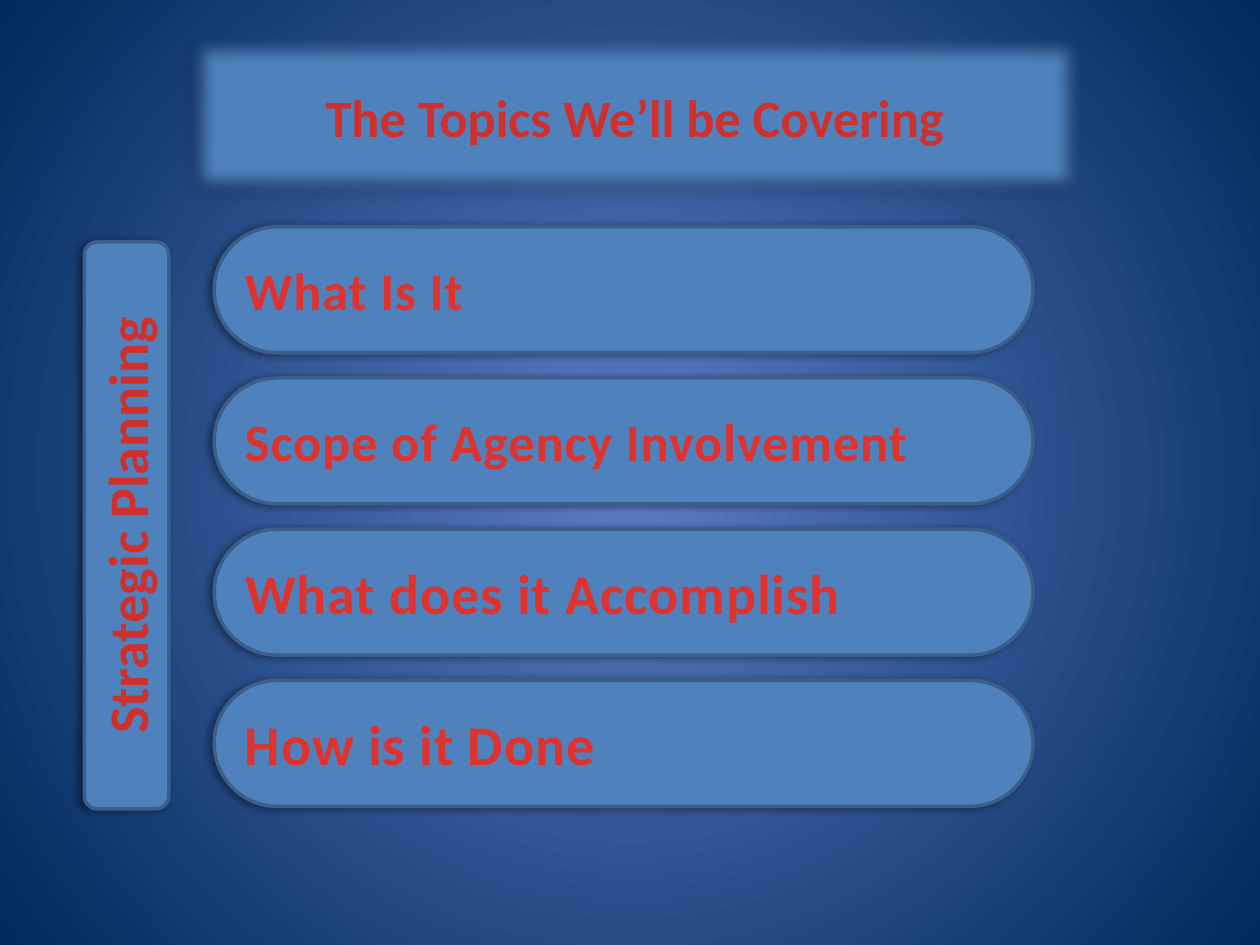
"""Build the agenda slide on strategic planning."""
from pptx import Presentation
from pptx import util as u
from pptx.dml.color import RGBColor
from pptx.enum import shapes, text
from pptx.oxml import parse_xml
from pptx.oxml.ns import nsdecls, qn

TITLE = "The Topics We’ll be Covering"
SIDEBAR = "Strategic Planning"
TOPICS = [
    ("What Is It", 30),
    ("Scope of Agency Involvement", 30),
    ("What does it Accomplish", 32),
    ("How is it Done", 32),
]
BODY_TOPIC = 2

COLORS = {
    "glow": "5E7CC5",
    "navy": "00295C",
    "panel": "4F81BD",
    "border": "3A5F8C",
    "heading": "D02F2C",
    "topic": "E0322D",
    "shadow": "000000",
}
TITLE_BOX = (108, 21.6, 509.76, 90)
SIDEBAR_BOX = (48.24, 138.24, 48.24, 324)
TOPIC_LEFT, TOPIC_TOP, TOPIC_WIDTH, TOPIC_HEIGHT, TOPIC_PITCH = 122.4, 129.6, 468, 72, 86.4


def rgb(name):
    return RGBColor.from_string(COLORS[name])


def paint_background(s):
    fill = s.background.fill
    fill.gradient()
    for stop, name, position in zip(fill.gradient_stops, ("glow", "navy"), (0, 1)):
        stop.color.rgb = rgb(name)
        stop.position = position
    lin = next(s.element.iter(qn("a:lin")))
    lin.getparent().replace(lin, parse_xml(
        f'<a:path {nsdecls("a")} path="circle">'
        '<a:fillToRect l="50000" t="50000" r="50000" b="50000"/></a:path>'))


def style_panel(sp, box, radius, shadow_angle, soft_edge=0):
    sp.left, sp.top, sp.width, sp.height = map(u.Pt, box)
    props = sp.element.spPr
    for old in props.findall(qn("a:prstGeom")):
        props.remove(old)
    props.insert(1, parse_xml(
        f'<a:prstGeom {nsdecls("a")} prst="roundRect"><a:avLst>'
        f'<a:gd name="adj" fmla="val {round(radius * 100000)}"/></a:avLst></a:prstGeom>'))
    sp.fill.solid()
    sp.fill.fore_color.rgb = rgb("panel")
    sp.line.color.rgb = rgb("border")
    sp.line.width = u.Pt(2)
    sp.shadow.inherit = False
    effects = props.find(qn("a:effectLst"))
    effects.append(parse_xml(
        f'<a:outerShdw {nsdecls("a")} blurRad="{u.Pt(4)}" dist="{u.Pt(3)}" '
        f'dir="{shadow_angle * 60000}" algn="ctr" rotWithShape="0">'
        f'<a:srgbClr val="{COLORS["shadow"]}"><a:alpha val="40000"/></a:srgbClr></a:outerShdw>'))
    if soft_edge:
        effects.append(parse_xml(f'<a:softEdge {nsdecls("a")} rad="{u.Pt(soft_edge)}"/>'))


def write(sp, words, size, color, align, spacing=0):
    tf = sp.text_frame
    tf.text = words
    tf.word_wrap = True
    tf.auto_size = text.MSO_AUTO_SIZE.NONE
    tf.vertical_anchor = text.MSO_ANCHOR.MIDDLE
    p = tf.paragraphs[0]
    p.alignment = align
    p.space_before = u.Pt(0)
    r = p.runs[0]
    r.font.name = "Calibri"
    r.font.size = u.Pt(size)
    r.font.bold = True
    r.font.color.rgb = rgb(color)
    if spacing:
        r.font._element.set("spc", str(round(spacing * 100)))


def add_panel(s):
    return s.shapes.add_shape(shapes.MSO_SHAPE.ROUNDED_RECTANGLE, 0, 0, 0, 0)


def main():
    prs = Presentation()
    prs.slide_width, prs.slide_height = u.Pt(720), u.Pt(540)
    s = prs.slides.add_slide(prs.slide_layouts[1])
    paint_background(s)
    title, body = s.placeholders

    style_panel(title, TITLE_BOX, 0.17, 135, soft_edge=8.86)
    write(title, TITLE, 30, "heading", text.PP_ALIGN.CENTER)

    for i, (words, size) in enumerate(TOPICS):
        sp = body if i == BODY_TOPIC else add_panel(s)
        box = (TOPIC_LEFT, TOPIC_TOP + i * TOPIC_PITCH, TOPIC_WIDTH, TOPIC_HEIGHT)
        style_panel(sp, box, 0.5, 180)
        write(sp, words, size, "topic", text.PP_ALIGN.LEFT, spacing=0.5)
    ppr = body.text_frame.paragraphs[0]._p.get_or_add_pPr()
    ppr.set("marL", "0")
    ppr.set("indent", "0")
    ppr.append(parse_xml(f'<a:buNone {nsdecls("a")}/>'))

    sidebar = add_panel(s)
    style_panel(sidebar, SIDEBAR_BOX, 0.15, 180)
    write(sidebar, SIDEBAR, 32, "heading", text.PP_ALIGN.CENTER)
    sidebar.text_frame._txBody.bodyPr.set("vert", "vert270")

    prs.save("out.pptx")


if __name__ == "__main__":
    main()
